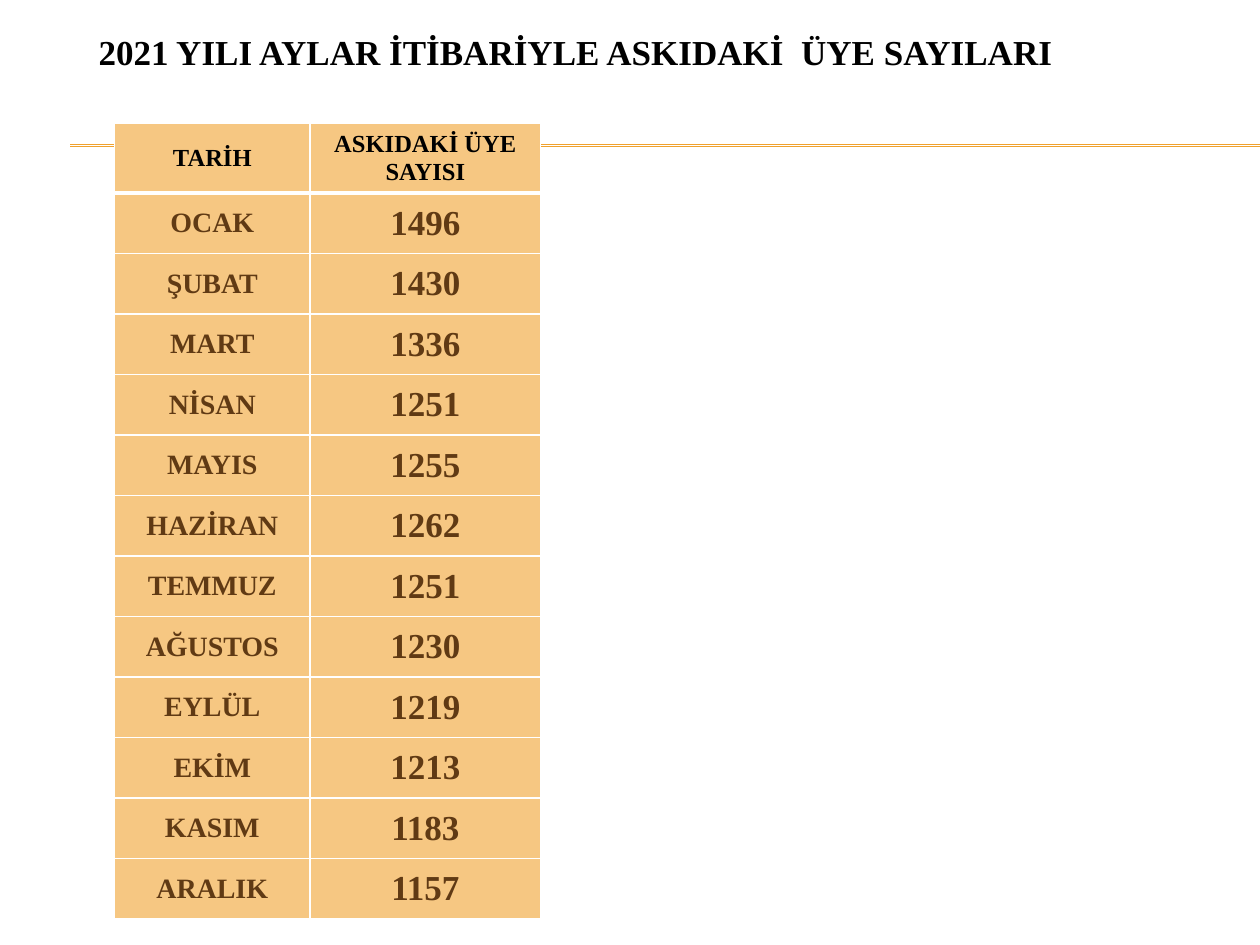
from lxml import etree
from pptx import Presentation
from pptx.dml.color import RGBColor
from pptx.enum.shapes import MSO_CONNECTOR
from pptx.enum.text import MSO_ANCHOR, PP_ALIGN
from pptx.oxml.ns import qn
from pptx.util import Cm, Pt

COLORS = {
    "rule": "F0A22E",
    "cell": "F6C782",
    "border": "FFFFFF",
    "heading": "000000",
    "body": "603A14",
}
TITLE = "2021 YILI AYLAR İTİBARİYLE ASKIDAKİ  ÜYE SAYILARI"
HEADERS = ("TARİH", "ASKIDAKİ ÜYE SAYISI")
MEMBERS = [
    ("OCAK", 1496), ("ŞUBAT", 1430), ("MART", 1336), ("NİSAN", 1251),
    ("MAYIS", 1255), ("HAZİRAN", 1262), ("TEMMUZ", 1251), ("AĞUSTOS", 1230),
    ("EYLÜL", 1219), ("EKİM", 1213), ("KASIM", 1183), ("ARALIK", 1157),
]


class SlideBuilder:
    font = "Times New Roman"

    def __init__(self, slide):
        self.s = slide

    def color(self, name):
        return RGBColor.from_string(COLORS[name])

    def add_text(self, tf, text, size, color):
        """Add one bold, centred run to the first paragraph."""
        p = tf.paragraphs[0]
        p.alignment = PP_ALIGN.CENTER
        r = p.add_run()
        r.text = text
        r.font.name = self.font
        r.font.size = Pt(size)
        r.font.bold = True
        r.font.color.rgb = self.color(color)

    def line(self, x1, x2, y):
        sp = self.s.shapes.add_connector(
            MSO_CONNECTOR.STRAIGHT, Cm(x1), Cm(y), Cm(x2), Cm(y))
        sp.line.color.rgb = self.color("rule")
        sp.line.width = Pt(0.75)
        etree.SubElement(sp._element.spPr, qn("a:effectLst"))

    def title(self, text, x, y, w, h):
        tf = self.s.shapes.add_textbox(Cm(x), Cm(y), Cm(w), Cm(h)).text_frame
        tf.word_wrap = True
        tf.vertical_anchor = MSO_ANCHOR.MIDDLE
        self.add_text(tf, text, 20, "heading")

    def borders(self, cell, **widths):
        """Set the widths in points of the sides L, R, T and B, in that order."""
        tcPr = cell._tc.get_or_add_tcPr()
        for i, (side, width) in enumerate(widths.items()):
            ln = etree.Element(qn(f"a:ln{side}"), w=str(Pt(width)))
            fill = etree.SubElement(ln, qn("a:solidFill"))
            etree.SubElement(fill, qn("a:srgbClr"), val=COLORS["border"])
            tcPr.insert(i, ln)

    def cell(self, cell, text, size, color, top=1, bottom=1):
        cell.fill.solid()
        cell.fill.fore_color.rgb = self.color("cell")
        cell.vertical_anchor = MSO_ANCHOR.MIDDLE
        self.add_text(cell.text_frame, text, size, color)
        self.borders(cell, L=1, R=1, T=top, B=bottom)

    def table(self, headers, rows, x, y, widths, head_h, row_h):
        heights = [head_h] + [row_h] * len(rows)
        table = self.s.shapes.add_table(
            len(heights), len(widths), Cm(x), Cm(y),
            Cm(sum(widths)), Cm(sum(heights))).table
        for col, width in zip(table.columns, widths):
            col.width = Cm(width)
        for row, height in zip(table.rows, heights):
            row.height = Cm(height)
        for c, text in enumerate(headers):
            self.cell(table.cell(0, c), text, 14, "heading", bottom=3)
        for r, values in enumerate(rows, start=1):
            for c, (value, size) in enumerate(zip(values, (16, 20))):
                self.cell(table.cell(r, c), str(value), size, "body",
                          top=3 if r == 1 else 1)


def main():
    prs = Presentation()
    prs.slide_width, prs.slide_height = Cm(25.4), Cm(19.05)
    b = SlideBuilder(prs.slides.add_slide(prs.slide_layouts[6]))
    for y in (2.92, 2.95):
        b.line(1.42, 25.4, y)
    b.table(HEADERS, MEMBERS, 2.31, 2.49, (3.94, 4.65), 1.4, 1.22)
    b.title(TITLE, 0.71, 0.13, 21.79, 1.8)
    prs.save("out.pptx")


if __name__ == "__main__":
    main()
